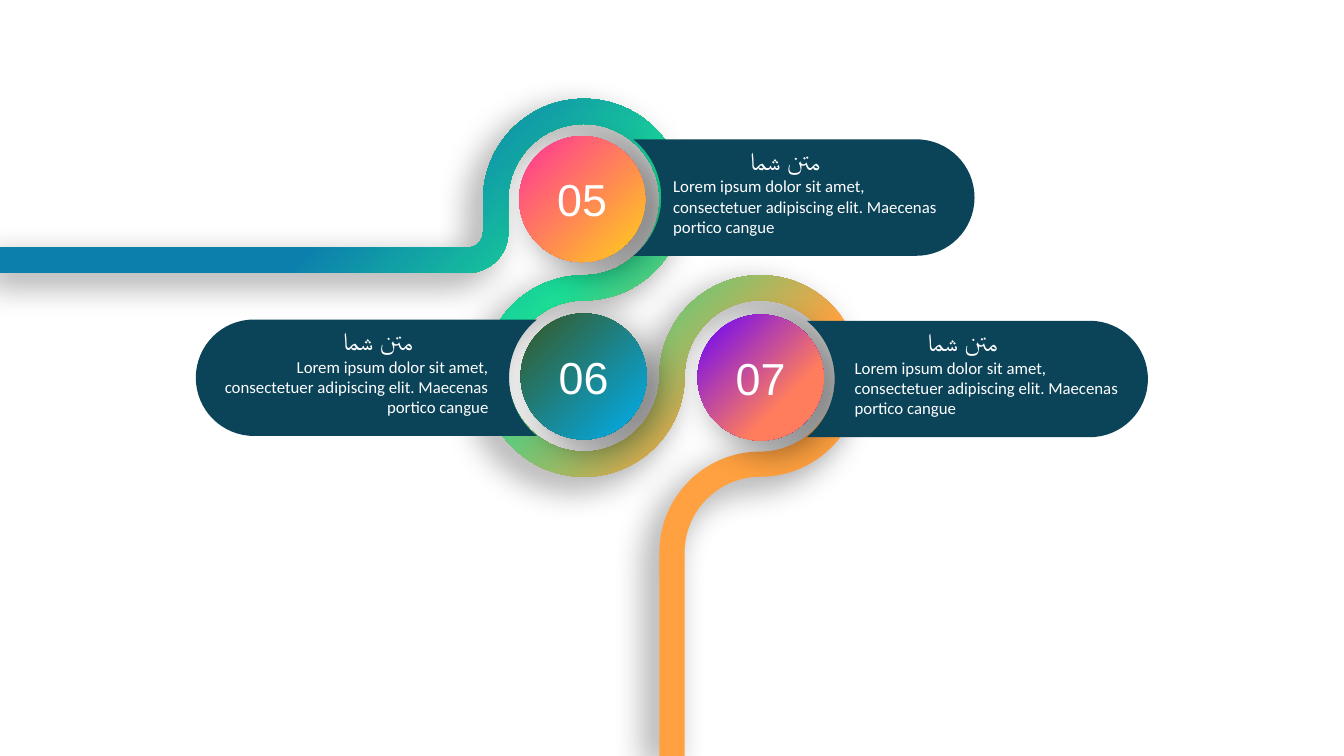
from dataclasses import dataclass
from math import asin, ceil, cos, degrees, radians, sin, tan

from pptx import Presentation
from pptx.dml.color import RGBColor
from pptx.enum.shapes import MSO_SHAPE
from pptx.enum.text import MSO_ANCHOR, MSO_AUTO_SIZE, PP_ALIGN
from pptx.oxml import parse_xml
from pptx.oxml.ns import nsdecls, qn
from pptx.util import Inches, Pt


@dataclass(frozen=True)
class Theme:
    panel: str = "0B4359"
    text: str = "FFFFFF"
    ribbon: tuple = ((30, "FFA140"), (50, "1BDD96"), (70, "0C7FAD"))
    number: tuple = ("Arial", 32)
    title: tuple = ("Arial", 18)
    body: tuple = ("Calibri", 12)


THEME = Theme()
CELL = 0.25  # grid pitch in inches; all lengths below are in cells
COLUMNS, ROWS = 53.33, 30
TITLE = "متن شما"
BODY = ("Lorem ipsum dolor sit amet, consectetuer adipiscing elit. "
        "Maecenas portico cangue")

# Ribbon: rings whose centre lines touch, one step apart
HALF_WIDTH, RADIUS = 0.5, 3.5
STEP = 2 * RADIUS
RING_X, RING_Y = 23.17, 7.92
LEAD_Y, CORNER = 10.33, 1.11

# Panel: a notch around the disc on one end, a round cap on the other
HALF_HEIGHT, NOTCH, CAP_OFFSET = 2.31, 2.96, 13.08

# Number, disc corner, panel hub, side, title left, body left,
# gradient stops, gradient angle (None radiates from the lower right)
STAGES = [
    ("07", (27.68, 12.48), (30.16, 15.04), 1, 33.36, 33.52,
     ((31, "FF7D5D"), (100, "6600FF")), None),
    ("06", (20.66, 12.44), (23.16, 14.99), -1, 10.16, 8.46,
     ((0, "385723"), (100, "00B0F0")), 45),
    ("05", (20.6, 5.4), (23.28, 7.84), 1, 26.32, 26.32,
     ((11, "FFBF27"), (100, "FF3399")), None),
]


def grid(*cells):
    return [Inches(cell * CELL) for cell in cells]


def arc(center_x, center_y, radius, start, end):
    """A line to the arc's start, then one curve per quarter turn or less.

    Angles run in degrees clockwise from the right.
    """
    def spot(angle, pull=0):
        a = radians(angle)
        return (center_x + radius * (cos(a) - pull * sin(a)),
                center_y + radius * (sin(a) + pull * cos(a)))

    count = ceil(abs(end - start) / 90)
    sweep = (end - start) / count
    pull = 4 / 3 * tan(radians(sweep) / 4)
    turns = [start + sweep * i for i in range(count)]
    return [[spot(start)]] + [
        [spot(a, pull), spot(a + sweep, -pull), spot(a + sweep)] for a in turns]


def add_outline(shapes, steps):
    """Steps hold one point for a line, three for a curve."""
    (first,), *rest = steps
    builder = shapes.build_freeform(*grid(*first), scale=1.0)
    builder.add_line_segments([grid(*point) for step in rest for point in step],
                              close=True)
    shape = builder.convert_to_shape()
    lines = iter(list(shape._element.spPr.iter(qn("a:lnTo"))))
    for step in rest:
        parts = [next(lines) for _ in step]
        if len(parts) == 3:
            curve = parse_xml(f'<a:cubicBezTo {nsdecls("a")}/>')
            parts[0].addprevious(curve)
            for part in parts:
                curve.append(part[0])
                part.getparent().remove(part)
    shape.line.fill.background()
    shape.shadow.inherit = False
    return shape


def fill_gradient(shape, stops, angle):
    shape.fill.gradient()
    old = shape._element.spPr.find(qn("a:gradFill"))
    colors = "".join(
        f'<a:gs pos="{share * 1000}"><a:srgbClr val="{color}"/></a:gs>'
        for share, color in stops)
    if angle is None:
        course = '<a:path path="circle"><a:fillToRect l="100000" t="100000"/></a:path>'
    else:
        course = f'<a:lin ang="{angle * 60000}" scaled="0"/>'
    new = parse_xml(f'<a:gradFill {nsdecls("a")} rotWithShape="1">'
                    f'<a:gsLst>{colors}</a:gsLst>{course}</a:gradFill>')
    old.getparent().replace(old, new)


def cast_shadow(shape, direction):
    shape.shadow.inherit = False
    effects = shape._element.spPr.find(qn("a:effectLst"))
    effects.append(parse_xml(
        f'<a:outerShdw {nsdecls("a")} blurRad="{Pt(25)}" dist="{Pt(12)}" '
        f'dir="{direction * 60000}" algn="ctr" rotWithShape="0">'
        '<a:srgbClr val="000000"><a:alpha val="40000"/></a:srgbClr></a:outerShdw>'))


def write(box, text, style, align):
    para = box.text_frame.paragraphs[0]
    para.alignment = align
    span = para.add_run()
    span.text = text
    name, size = style
    for key, value in {"name": name, "size": Pt(size)}.items():
        setattr(span.font, key, value)
    span.font.color.rgb = RGBColor.from_string(THEME.text)
    # The same typeface for Persian letters
    span._r.get_or_add_rPr().append(
        parse_xml(f'<a:cs {nsdecls("a")} typeface="{name}"/>'))


def add_label(shapes, place, text, style, align):
    box = shapes.add_textbox(*grid(*place))
    for key, value in {"word_wrap": True,
                       "auto_size": MSO_AUTO_SIZE.SHAPE_TO_FIT_TEXT}.items():
        setattr(box.text_frame, key, value)
    write(box, text, style, align)


def add_ribbon(shapes):
    bends = [
        (RING_X - RADIUS - CORNER, LEAD_Y - CORNER, CORNER, 90, 0),
        (RING_X, RING_Y, RADIUS, 180, 450),
        (RING_X, RING_Y + STEP, RADIUS, 270, 0),
        (RING_X + STEP, RING_Y + STEP, RADIUS, 180, 450),
        (RING_X + STEP, RING_Y + 2 * STEP, RADIUS, 270, 180),
    ]
    tail_x = RING_X + STEP - RADIUS

    def bend_edge(bend, side):
        x, y, radius, start, end = bend
        turn = 1 if end > start else -1
        ends = (start, end) if side > 0 else (end, start)
        return arc(x, y, radius + side * turn * HALF_WIDTH, *ends)

    outline = [[(0, LEAD_Y - HALF_WIDTH)]]
    for bend in bends:
        outline += bend_edge(bend, 1)
    outline += [[(tail_x + HALF_WIDTH, ROWS)], [(tail_x - HALF_WIDTH, ROWS)]]
    for bend in reversed(bends):
        outline += bend_edge(bend, -1)
    outline.append([(0, LEAD_Y + HALF_WIDTH)])

    ribbon = add_outline(shapes, outline)
    fill_gradient(ribbon, THEME.ribbon, 225)
    cast_shadow(ribbon, 135)


def add_disc(shapes, number, corner, stops, angle):
    disc = shapes.add_shape(MSO_SHAPE.OVAL, *grid(*corner, 5, 5))
    disc.line.fill.background()
    fill_gradient(disc, stops, angle)
    cast_shadow(disc, 45)
    disc.text_frame.vertical_anchor = MSO_ANCHOR.MIDDLE
    write(disc, number, THEME.number, PP_ALIGN.CENTER)


def add_panel(shapes, hub, side, title_left, body_left):
    group = shapes.add_group_shape().shapes
    hub_x, hub_y = hub
    spread = degrees(asin(HALF_HEIGHT / NOTCH))
    outline = arc(0, 0, NOTCH, spread, -spread) + arc(CAP_OFFSET, 0, HALF_HEIGHT, -90, 90)
    panel = add_outline(group, [[(hub_x + side * x, hub_y + y) for x, y in step]
                                for step in outline])
    panel.fill.solid()
    panel.fill.fore_color.rgb = RGBColor.from_string(THEME.panel)
    add_label(group, (title_left, hub_y - 2.27, 9.64, 1.6),
              TITLE, THEME.title, PP_ALIGN.CENTER)
    add_label(group, (body_left, hub_y - 1.05, 11.32, 2.84),
              BODY, THEME.body, PP_ALIGN.LEFT if side > 0 else PP_ALIGN.RIGHT)


def main():
    deck = Presentation()
    deck.slide_width, deck.slide_height = grid(COLUMNS, ROWS)
    page = deck.slides.add_slide(deck.slide_layouts[6])

    # Winding road behind everything
    add_ribbon(page.shapes)
    # Numbered discs, then the panels that overlap them
    for number, corner, _, _, _, _, stops, angle in STAGES:
        add_disc(page.shapes, number, corner, stops, angle)
    for _, _, hub, side, title_left, body_left, _, _ in STAGES:
        add_panel(page.shapes, hub, side, title_left, body_left)

    deck.save("out.pptx")


if __name__ == "__main__":
    main()
